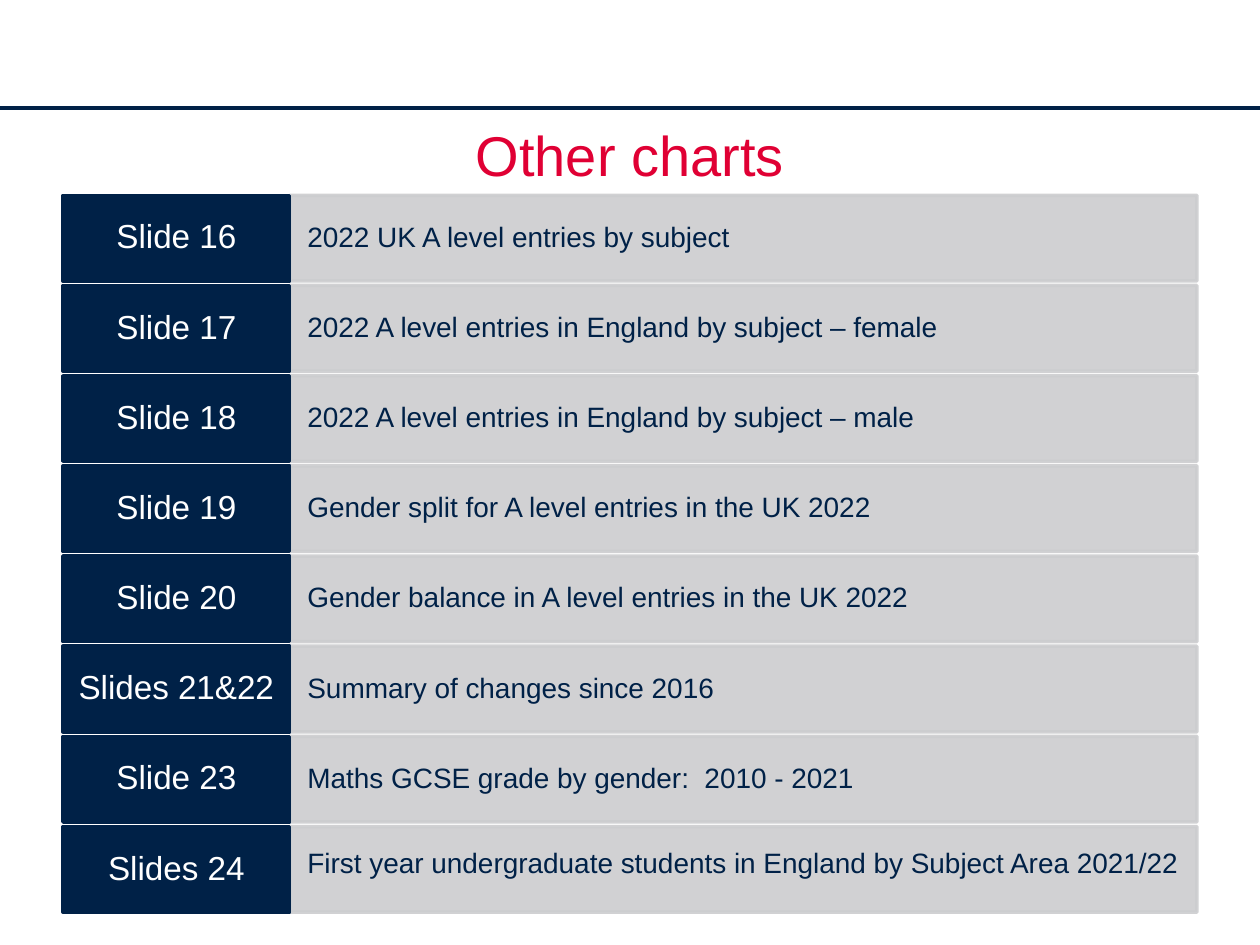
from pptx import Presentation
from pptx.dml.color import RGBColor
from pptx.enum import shapes, text
from pptx.oxml.ns import qn
from pptx.util import Inches, Pt
from lxml import etree

HUES = {"navy": "002147", "gray": "CCCDCF", "red": "E00034", "white": "FFFFFF"}
ROWS = [
    ("Slide 16", "2022 UK A level entries by subject"),
    ("Slide 17", "2022 A level entries in England by subject – female"),
    ("Slide 18", "2022 A level entries in England by subject – male"),
    ("Slide 19", "Gender split for A level entries in the UK 2022"),
    ("Slide 20", "Gender balance in A level entries in the UK 2022"),
    ("Slides 21&22", "Summary of changes since 2016 "),
    ("Slide 23", "Maths GCSE grade by gender:  2010 - 2021"),
    ("Slides 24", "First year undergraduate students in England by Subject Area 2021/22"),
]
TOP, LAST, TALL = 1.55, 6.56, 0.68
STEP = (LAST - TOP) / (len(ROWS) - 1)


class Deck:
    """Holds the style and the current slide."""

    def __init__(self, slide, font="Arial"):
        self.slide = slide
        self.font = font

    def hue(self, name):
        return RGBColor.from_string(HUES[name])

    def label(self, frame, words, size, color, align):
        frame.word_wrap = True
        frame.text = words
        para = frame.paragraphs[0]
        para.alignment = align
        font = para.runs[0].font
        font.name, font.size = self.font, Pt(size)
        font.color.rgb = self.hue(color)
        return para

    def rule(self, y, width):
        line = self.slide.shapes.add_connector(
            shapes.MSO_CONNECTOR.STRAIGHT, 0, Inches(y), Inches(10), Inches(y))
        line.line.color.rgb = self.hue("navy")
        line.line.width = Pt(width)
        etree.SubElement(line._element.spPr, qn("a:effectLst"))

    def title(self, words, box):
        item = self.slide.shapes.add_textbox(*map(Inches, box))
        self.label(item.text_frame, words, 32, "red", text.PP_ALIGN.CENTER)

    def cell(self, words, box, fill, color, size, align, side, low=0.05, alpha=100):
        item = self.slide.shapes.add_shape(
            shapes.MSO_SHAPE.RECTANGLE, *map(Inches, box))
        item.shadow.inherit = False
        item.fill.solid()
        item.fill.fore_color.rgb = item.line.color.rgb = self.hue(fill)
        item.line.width = Pt(2)
        if alpha < 100:
            for tint in item._element.spPr.iter(qn("a:srgbClr")):
                etree.SubElement(tint, qn("a:alpha")).set("val", str(alpha * 1000))
        frame = item.text_frame
        frame.margin_left = frame.margin_right = Inches(side)
        frame.margin_top, frame.margin_bottom = Inches(0.05), Inches(low)
        frame.vertical_anchor = text.MSO_ANCHOR.MIDDLE
        self.label(frame, words, size, color, align).line_spacing = 0.9


def main():
    show = Presentation()
    show.slide_width, show.slide_height = Inches(10), Inches(7.5)
    deck = Deck(show.slides.add_slide(show.slide_layouts[6]))
    deck.rule(0.86, 2.25)
    deck.title("Other charts", (0.5, 0.91, 9, 0.64))
    for i, (name, topic) in enumerate(ROWS):
        y = TOP + i * STEP
        low = 0.13 if i == len(ROWS) - 1 else 0.05
        deck.cell(topic, (2.3, y, 7.2, TALL), "gray", "navy", 16,
                  text.PP_ALIGN.LEFT, 0.14, low, alpha=90)
        deck.cell(name, (0.5, y, 1.8, TALL), "navy", "white", 19,
                  text.PP_ALIGN.CENTER, 0.1)
    show.save("out.pptx")


if __name__ == "__main__":
    main()
